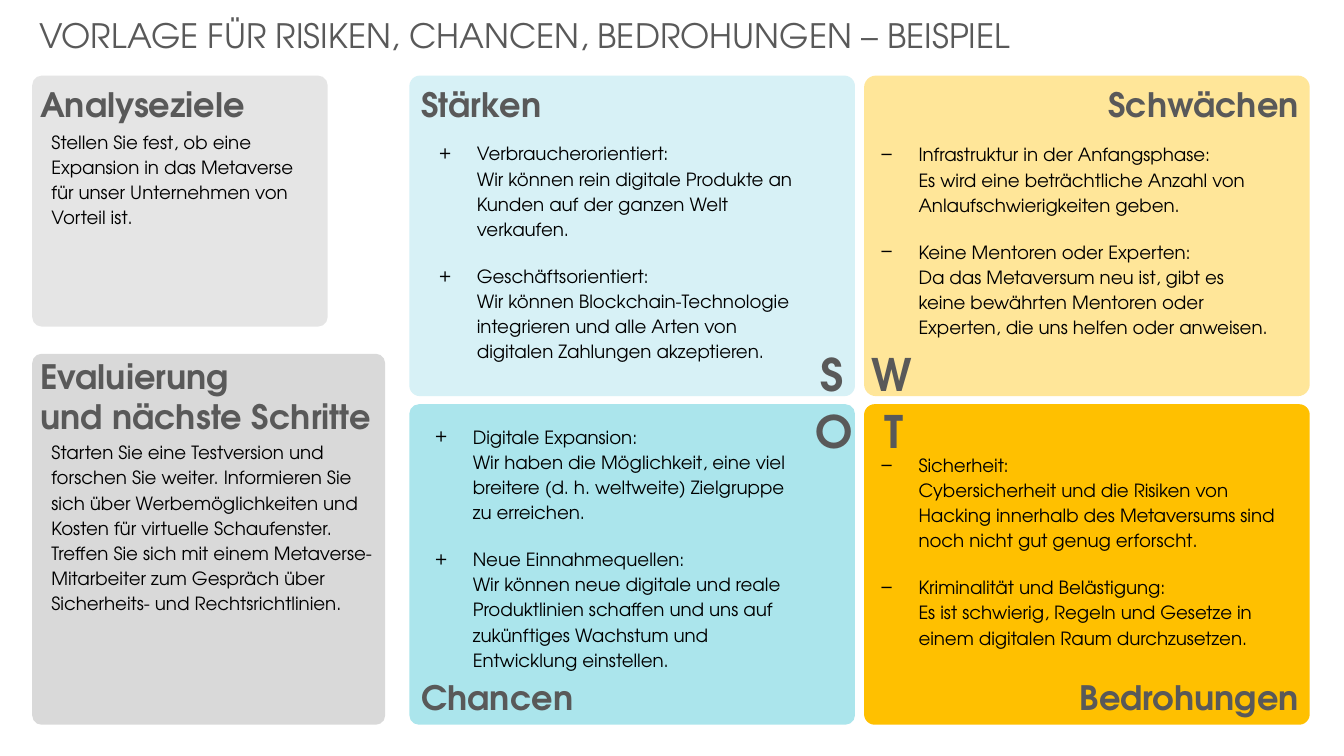
"""Build a SWOT slide with goals, next steps and four coloured quadrants."""
from pptx import Presentation
from pptx import util as u
from pptx.dml.color import RGBColor
from pptx.enum import shapes, text
from lxml import etree

FONT = "TeX Gyre Adventor"
HUES = {
    "ink": "000000", "head": "595959",
    "goal": "E5E5E5", "next": "D9D9D9",
    "S": "D7F1F6", "W": "FFE699", "O": "ABE5EC", "T": "FFC000",
}
LEFT, RIGHT = text.PP_ALIGN.LEFT, text.PP_ALIGN.RIGHT
TOP, MID = text.MSO_ANCHOR.TOP, text.MSO_ANCHOR.MIDDLE
SIDE = 0.32
COLS = [4.06 + 4.51 * n for n in range(2)]
ROWS = [0.75 + 3.26 * n for n in range(2)]
WIDE, HIGH = 4.42, 3.18

deck = Presentation()
deck.slide_width, deck.slide_height = u.Inches(13.33), u.Inches(7.5)
slide = deck.slides.add_slide(deck.slide_layouts[6])


def card(x, y, w, h, hue, bend):
    box = slide.shapes.add_shape(
        shapes.MSO_SHAPE.ROUNDED_RECTANGLE, *map(u.Inches, (x, y, w, h)))
    box.adjustments[0] = bend
    box.shadow.inherit = False
    box.fill.solid()
    box.fill.fore_color.rgb = RGBColor.from_string(HUES[hue])
    box.line.fill.background()


def write(x, y, w, h, paras, size=24, bold=True, hue="head", align=LEFT,
          anchor=TOP, inset=0.1, lead=None, mark=None):
    box = slide.shapes.add_textbox(*map(u.Inches, (x, y, w, h)))
    frame = box.text_frame
    frame.word_wrap = True
    frame.vertical_anchor = anchor
    frame.margin_left = u.Inches(inset)
    for n, lines in enumerate(paras):
        para = frame.paragraphs[0] if n == 0 else frame.add_paragraph()
        if mark:
            props = para._p.get_or_add_pPr()
            props.set("marL", str(u.Inches(0.38)))
            props.set("indent", str(-u.Inches(0.38)))
            space = "{" + props.nsmap["a"] + "}"
            etree.SubElement(props, space + "buFont", typeface=FONT)
            etree.SubElement(props, space + "buChar", char=mark)
            if n:
                para.space_before = u.Pt(15.7)
        para.alignment = align
        if lead:
            para.line_spacing = lead
        for k, line in enumerate(lines):
            if k:
                para.add_line_break()
            run = para.add_run()
            run.text = line
            run.font.name, run.font.size, run.font.bold = FONT, u.Pt(size), bold
            run.font.color.rgb = RGBColor.from_string(HUES[hue])
        para.font.name, para.font.size = FONT, u.Pt(size)


BODY = {"size": 13, "bold": False, "hue": "ink", "inset": 0.15, "lead": 1.15}

write(0.29, 0.1, 12.69, 0.5,
      [["VORLAGE FÜR RISIKEN, CHANCEN, BEDROHUNGEN – BEISPIEL"]], bold=False)

card(SIDE, ROWS[0], 2.93, 2.49, "goal", 0.038)
card(SIDE, 3.51, 3.5, 3.68, "next", 0.026)
for n, (key, bend) in enumerate(
        [("S", 0.033), ("W", 0.037), ("O", 0.03), ("T", 0.033)]):
    card(COLS[n % 2], ROWS[n // 2], WIDE, HIGH, key, bend)

write(0.36, 1.22, 2.78, 1.59, [[
    "Stellen Sie fest, ob eine Expansion in das Metaverse für unser "
    "Unternehmen von Vorteil ist."]], **BODY)
write(0.36, 4.3, 3.45, 2.41, [[
    "Starten Sie eine Testversion und forschen Sie weiter. Informieren Sie "
    "sich über Werbemöglichkeiten und Kosten für virtuelle Schaufenster. "
    "Treffen Sie sich mit einem Metaverse-Mitarbeiter zum Gespräch über "
    "Sicherheits- und Rechtsrichtlinien."]], **BODY)
write(0.3, 0.78, 3.17, 0.91, [["Analyseziele"]])
write(0.3, 3.48, 3.5, 0.91, [["Evaluierung"], ["und nächste Schritte"]])

QUADS = [
    ("S", "Stärken", (4.2, 1.21, 3.83, 2.56), (4.74, 3.39, 3.73, 0.94), [
        ["Verbraucherorientiert:",
         "Wir können rein digitale Produkte an Kunden auf der ganzen Welt "
         "verkaufen."],
        ["Geschäftsorientiert:",
         "Wir können Blockchain-Technologie integrieren und alle Arten von "
         "digitalen Zahlungen akzeptieren."]]),
    ("W", "Schwächen", (8.58, 1.22, 4.09, 2.31), (8.55, 3.39, 3.82, 0.94), [
        ["Infrastruktur in der Anfangsphase:",
         "Es wird eine beträchtliche Anzahl von Anlaufschwierigkeiten geben."],
        ["Keine Mentoren oder Experten:",
         "Da das Metaversum neu ist, gibt es keine bewährten Mentoren oder "
         "Experten, die uns helfen oder anweisen."]]),
    ("O", "Chancen", (4.16, 4.04, 3.87, 2.77), (4.74, 3.96, 3.82, 0.64), [
        ["Digitale Expansion:",
         "Wir haben die Möglichkeit, eine viel breitere (d. h. weltweite) "
         "Zielgruppe zu erreichen."],
        ["Neue Einnahmequellen:",
         "Wir können neue digitale und reale Produktlinien schaffen und uns "
         "auf zukünftiges Wachstum und Entwicklung einstellen."]]),
    ("T", "Bedrohungen", (8.58, 4.07, 4.28, 2.77), (8.67, 3.96, 3.7, 0.67), [
        ["Sicherheit:",
         "Cybersicherheit und die Risiken von Hacking innerhalb des "
         "Metaversums sind noch nicht gut genug erforscht."],
        ["Kriminalität und Belästigung:",
         "Es ist schwierig, Regeln und Gesetze in einem digitalen Raum "
         "durchzusetzen."]]),
]
for n, (key, head, area, spot, points) in enumerate(QUADS):
    col, row = n % 2, n // 2
    write(*area, points, anchor=MID, mark="+−"[col], **BODY)
    write([4.08, 8.75][col], [0.78, 6.67][row], 4.23, 0.5, [[head]],
          align=[LEFT, RIGHT][col])
    write(*spot, [[key]], size=32, align=[RIGHT, LEFT][col])

deck.save("out.pptx")
